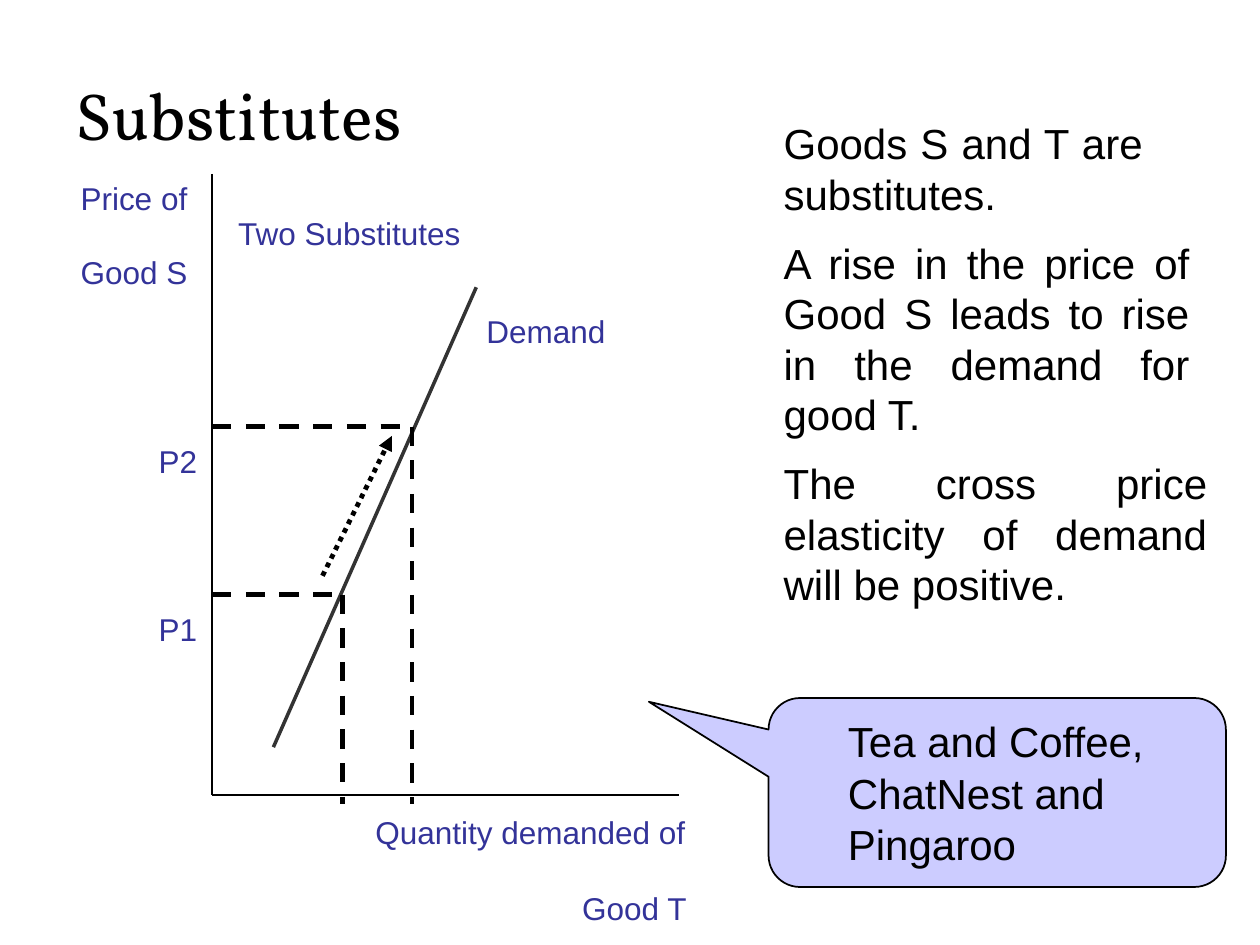
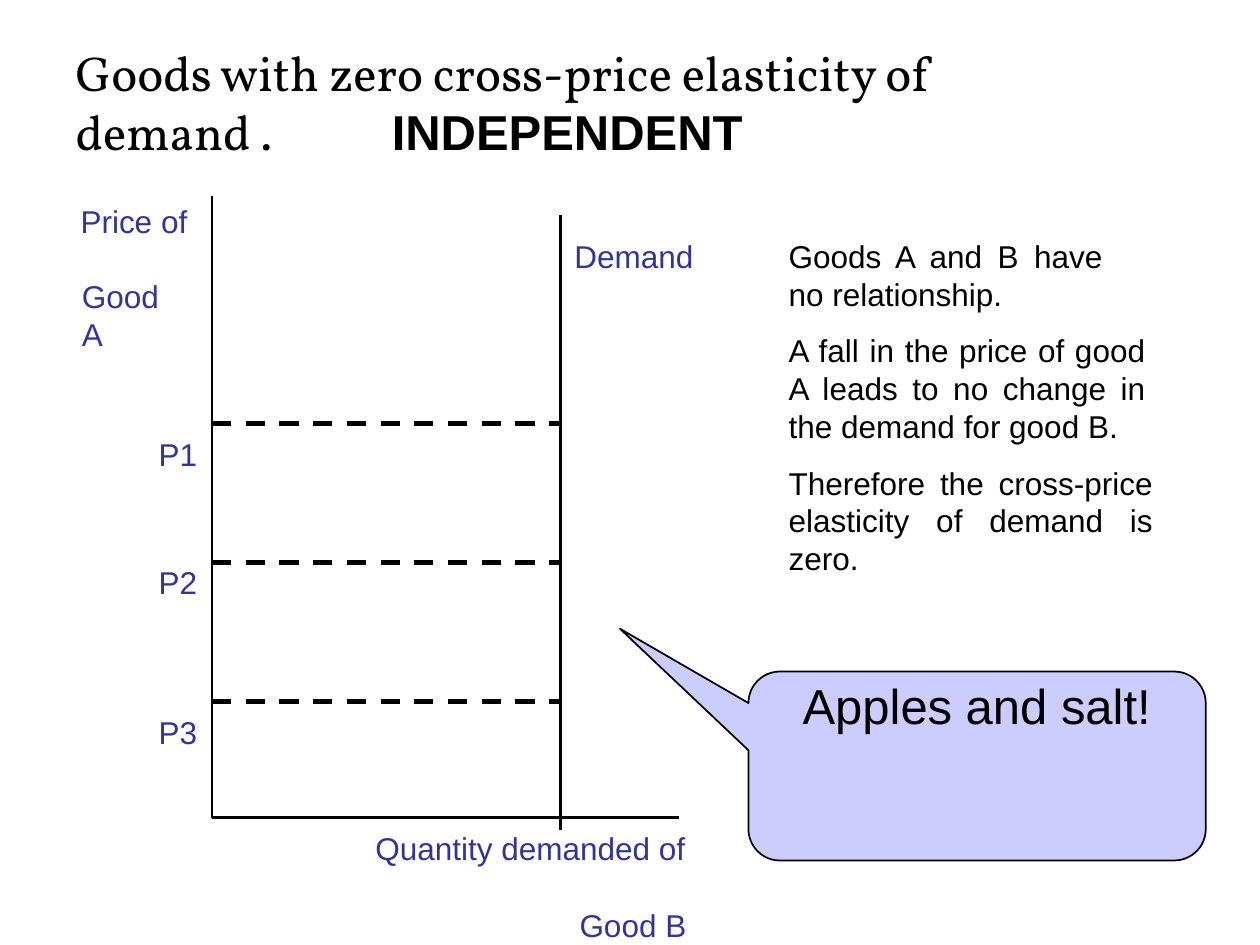
"""Build two slides on cross-price elasticity: substitutes and independent goods."""
from pptx import Presentation
from pptx.dml.color import RGBColor
from pptx.enum.dml import MSO_LINE
from pptx.enum.shapes import MSO_CONNECTOR, MSO_SHAPE
from pptx.enum.text import PP_ALIGN
from pptx.oxml.ns import qn
from pptx.util import Inches, Pt
from lxml.etree import SubElement

BLACK = RGBColor(0x00, 0x00, 0x00)
CHARCOAL = RGBColor(0x33, 0x33, 0x33)
INDIGO = RGBColor(0x33, 0x33, 0x99)
LAVENDER = RGBColor(0xCC, 0xCC, 0xFF)
CELL = Inches(0.1)
COLUMNS, ROWS = 100, 75
AXIS_X, AXIS_END = 16.84, 53.9
AXIS_LENGTH = 49.3
CALLOUT_WIDTH, CALLOUT_HEIGHT = 36.3, 15


def add_text(slide, text, left, top, width, height, size=18, font="Arial", color=INDIGO,
             align=PP_ALIGN.LEFT, gap=0, indents=(), right_indents=(), tab=None, bold_tail=None):
    box = [round(length * CELL) for length in (left, top, width, height)]
    frame = slide.shapes.add_textbox(*box).text_frame
    frame.word_wrap = True
    frame.margin_left = frame.margin_top = Inches(0.01)
    frame.margin_right = frame.margin_bottom = 0
    for index, line in enumerate(text.split("\n")):
        paragraph = frame.paragraphs[0] if index == 0 else frame.add_paragraph()
        properties = paragraph._p.get_or_add_pPr()
        if indents:
            properties.set("marL", str(round(indents[index] * CELL)))
        if right_indents:
            properties.set("marR", str(round(right_indents[index] * CELL)))
        if index:
            paragraph.space_before = Pt(gap)
        if tab:
            stops = SubElement(properties, qn("a:tabLst"))
            SubElement(stops, qn("a:tab"), pos=str(round(tab * CELL)), algn="l")
        paragraph.alignment = align
        runs = [(line, font, False)]
        if bold_tail:
            runs.append((bold_tail, "Arial", True))
        for words, face, bold in runs:
            run = paragraph.add_run()
            run.text = words
            run.font.name, run.font.size, run.font.bold = face, Pt(size), bold
            run.font.color.rgb = color


def add_lines(slide, *segments, width=2.75, color=BLACK, dash=None, arrow=False):
    scaled = [[round(length * CELL) for length in segment] for segment in segments]
    if len(scaled) == 1:
        drawn = slide.shapes.add_connector(MSO_CONNECTOR.STRAIGHT, *scaled[0])
        SubElement(drawn._element.spPr, qn("a:effectLst"))
    else:
        builder = slide.shapes.build_freeform(*scaled[0][:2])
        for x1, y1, x2, y2 in scaled:
            builder.move_to(x1, y1)
            builder.add_line_segments([(x2, y2)], close=False)
        drawn = builder.convert_to_shape()
        drawn.fill.background()
        drawn.shadow.inherit = False
    drawn.line.width = Pt(width)
    drawn.line.color.rgb = color
    if dash:
        drawn.line.dash_style = dash
    if arrow:
        SubElement(drawn.line._get_or_add_ln(), qn("a:tailEnd"), type="triangle")


deck = Presentation()
deck.slide_width, deck.slide_height = COLUMNS * CELL, ROWS * CELL
substitutes, independent = [deck.slides.add_slide(deck.slide_layouts[6]) for _ in range(2)]

for slide, axis_top, callout_left, callout_top, tip_x, tip_y in (
        (substitutes, 13.8, 61, 55.4, 51.5, 55.7),
        (independent, 15.6, 59.4, 53.3, 49.2, 49.9)):
    origin = axis_top + AXIS_LENGTH
    add_lines(slide, (AXIS_X, axis_top, AXIS_X, origin), (AXIS_X, origin, AXIS_END, origin),
              width=1.5)
    add_text(slide, "Price of", 6.3, axis_top + 0.3, 10, 3.3)

    callout_box = (callout_left, callout_top, CALLOUT_WIDTH, CALLOUT_HEIGHT)
    callout = slide.shapes.add_shape(MSO_SHAPE.ROUNDED_RECTANGULAR_CALLOUT,
                                     *[round(length * CELL) for length in callout_box])
    callout.adjustments[0] = (tip_x - callout_left) / CALLOUT_WIDTH - 0.5
    callout.adjustments[1] = (tip_y - callout_top) / CALLOUT_HEIGHT - 0.5
    callout.shadow.inherit = False
    callout.fill.solid()
    callout.fill.fore_color.rgb = LAVENDER
    callout.line.color.rgb = BLACK
    callout.line.width = Pt(1)

add_text(substitutes, "Substitutes", 5.9, 5.8, 40, 6.6, size=38, font="Vollkorn", color=BLACK)
add_text(substitutes, "Good S", 6.3, 20, 10, 3.3)
add_text(substitutes, "Quantity demanded of\nGood T", 29.7, 64.4, 26, 9.2,
         gap=22.3, indents=(0, 16.4))
add_text(substitutes, "Two Substitutes", 18.8, 16.9, 24.9, 3.3)
add_text(substitutes, "Demand", 38.5, 24.7, 12, 3.3)
add_lines(substitutes, (37.8, 22.8, 21.7, 59.3), width=2, color=CHARCOAL)
guides = []
for price, price_y, quantity_x, label_y in (("P2", 33.85, 32.7, 35), ("P1", 47.2, 27.2, 48.3)):
    guides.append((AXIS_X, price_y, quantity_x, price_y))
    guides.append((quantity_x, price_y, quantity_x, 63.8))
    add_text(substitutes, price, 12.5, label_y, 4, 3.3)
add_lines(substitutes, *guides, dash=MSO_LINE.DASH)
add_lines(substitutes, (25.6, 45.7, 31.1, 34.6), dash=MSO_LINE.ROUND_DOT, arrow=True)
add_text(substitutes, "Tea and Coffee,\nChatNest and Pingaroo", 67.2, 56.7, 28.6, 12.4,
         size=24, color=BLACK, gap=0.9)
add_text(substitutes,
         "Goods S and T are substitutes.\n"
         "A rise in the price of Good S leads to rise in the demand for good T.\n"
         "The cross price elasticity of demand will be positive.",
         62.1, 9.25, 33.7, 39.4, size=24, color=BLACK, align=PP_ALIGN.JUSTIFY,
         gap=10.8, right_indents=(5.1, 1.4, 0))

add_text(independent, "Goods with zero cross-price elasticity of demand .\t", 5.9, 3.3, 80, 11.6,
         size=28, font="Vollkorn", color=BLACK, tab=25.1, bold_tail="INDEPENDENT")
add_text(independent, "Good A", 6.4, 21.9, 7.6, 6.6)
add_text(independent, "Quantity demanded of\nGood B", 29.7, 65.7, 26, 9.2,
         gap=22.3, indents=(0, 16.2))
add_text(independent, "Demand", 45.5, 18.7, 12, 3.3)
add_lines(independent, (44.5, 17.1, 44.5, 65.9), width=2)
guides = []
for row, label_y in enumerate((34.4, 44.6, 56.5)):
    price_y = 33.6 + row * 11.05
    guides.append((AXIS_X, price_y, 44.5, price_y))
    add_text(independent, f"P{row + 1}", 12.5, label_y, 4, 3.3)
add_lines(independent, *guides, dash=MSO_LINE.DASH)
add_text(independent,
         "Goods A and B have no relationship.\n"
         "A fall in the price of good A leads to no change in the demand for good B.\n"
         "Therefore the cross-price elasticity of demand is zero.",
         62.5, 18.7, 29, 28.4, color=BLACK, align=PP_ALIGN.JUSTIFY,
         gap=10.8, right_indents=(4, 0.6, 0))
add_text(independent, "Apples and salt!", 63.6, 53.5, 30, 4.9, size=28, color=BLACK)

deck.save("out.pptx")
